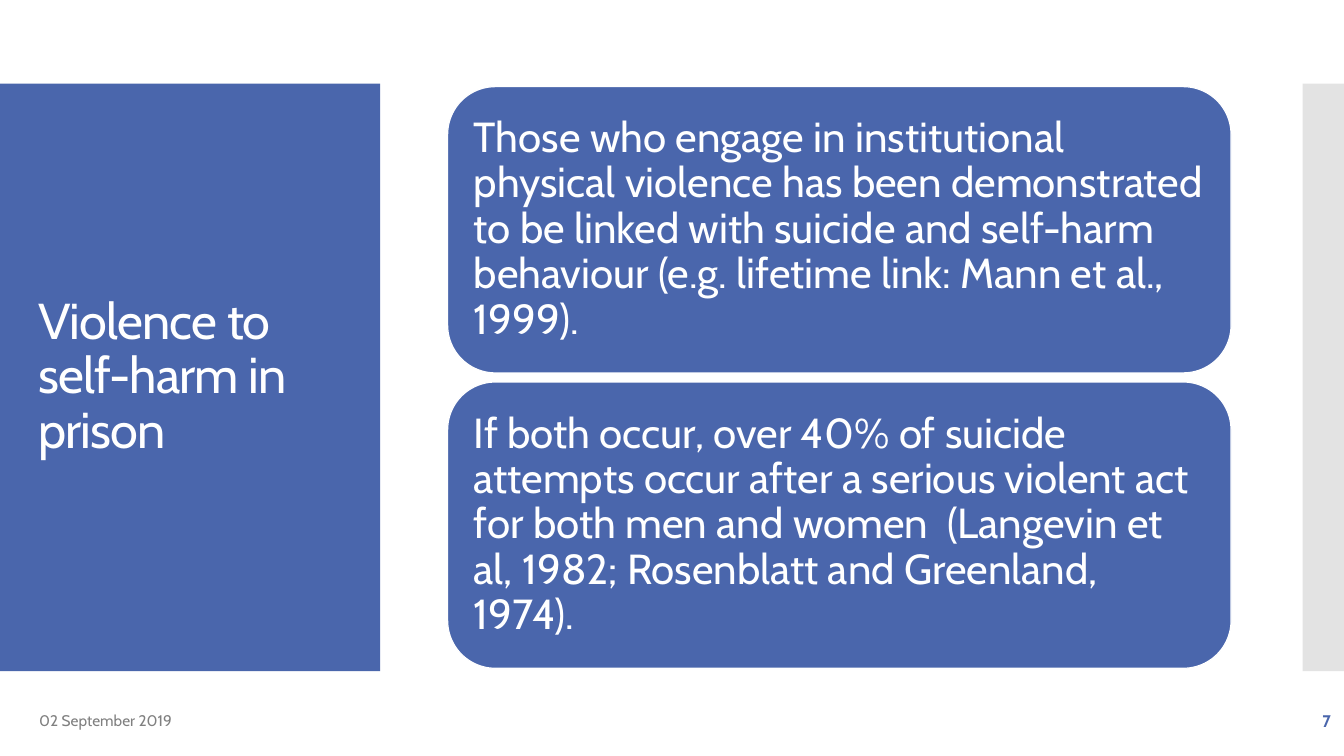
from lxml import etree
from pptx import Presentation
from pptx.dml.color import RGBColor
from pptx.enum.shapes import MSO_SHAPE as Shape
from pptx.enum.text import MSO_ANCHOR as Anchor, MSO_AUTO_SIZE as AutoSize, PP_ALIGN as Align
from pptx.oxml.ns import qn
from pptx.util import Emu, Pt

EMU_PER_PX = 9144  # 100 px to the inch
COLORS = {
    "blue": "4A66AC",
    "white": "FFFFFF",
    "light": "C8C8C8",
    "gray": "808080",
}
FONT = "Cabin"
TITLE_ONLY = 5

STATEMENTS = [
    "Those who engage in institutional physical violence has been demonstrated to be "
    "linked with suicide and self-harm behaviour (e.g. lifetime link: Mann et al., 1999).",
    "If both occur, over 40% of suicide attempts occur after a serious violent act for "
    "both men and women  (Langevin et al, 1982; Rosenblatt and Greenland, 1974).",
]


def px(value):
    return Emu(value * EMU_PER_PX)


def color(name):
    return RGBColor.from_string(COLORS[name])


class SlideBuilder:
    def __init__(self, presentation):
        self.slide = presentation.slides.add_slide(presentation.slide_layouts[TITLE_ONLY])

    def set_text(self, shape, text, size, ink, align=Align.LEFT, bold=False,
                 line_spacing=1.0, space_after=0):
        """Set one middle-anchored paragraph."""
        frame = shape.text_frame
        frame.text = text
        frame.word_wrap = True
        frame.auto_size = AutoSize.NONE
        frame.vertical_anchor = Anchor.MIDDLE
        paragraph = frame.paragraphs[0]
        paragraph.alignment = align
        paragraph.line_spacing = line_spacing
        paragraph.space_after = Pt(space_after)
        font = paragraph.runs[0].font
        font.name = FONT
        font.size = Pt(size)
        font.bold = bold
        font.color.rgb = color(ink)

    def box(self, kind, left, top, width, height, fill):
        shape = self.slide.shapes.add_shape(kind, px(left), px(top), px(width), px(height))
        shape.shadow.inherit = False
        shape.fill.solid()
        shape.fill.fore_color.rgb = color(fill)
        shape.line.fill.background()
        return shape

    def panel(self, left, width, fill, opacity=100):
        """Add a side panel behind the title."""
        shape = self.box(Shape.RECTANGLE, left, 83, width, 583, fill)
        if opacity < 100:
            fill_color = next(shape.element.iter(qn("a:srgbClr")))
            etree.SubElement(fill_color, qn("a:alpha")).set("val", str(opacity * 1000))
        self.slide.shapes.title.element.addprevious(shape.element)

    def title(self, text, left, top, width, height):
        title = self.slide.shapes.title
        title.left, title.top = px(left), px(top)
        title.width, title.height = px(width), px(height)
        self.set_text(title, text, 36, "white", line_spacing=0.9)
        run_properties = next(title.element.iter(qn("a:rPr")))
        run_properties.set("spc", "-60")

    def card(self, text, left, top, width, height):
        card = self.box(Shape.ROUNDED_RECTANGLE, left, top, width, height, "blue")
        card.line.color.rgb = color("white")
        card.line.width = Pt(0.85)
        frame = card.text_frame
        frame.margin_left = frame.margin_right = px(12)
        frame.margin_top = frame.margin_bottom = px(12)
        self.set_text(card, text, 30, "white", line_spacing=0.9, space_after=10.5)

    def footer(self, text, left, width, size, ink, **style):
        label = self.slide.shapes.add_textbox(px(left), px(695), px(width), px(40))
        self.set_text(label, text, size, ink, space_after=6, **style)


def main():
    presentation = Presentation()
    presentation.slide_width = px(1333)
    presentation.slide_height = px(750)

    builder = SlideBuilder(presentation)
    builder.panel(0, 377, "blue")
    builder.panel(1292, 41, "light", opacity=50)
    builder.title("Violence to self-harm in prison", 28, 123, 322, 503)
    for row, statement in enumerate(STATEMENTS):
        builder.card(statement, 444, 86 + row * 293, 777, 284)
    builder.footer("02 September 2019", 29, 300, 11, "gray")
    builder.footer("7", 1163, 167, 12, "blue", align=Align.RIGHT, bold=True)

    presentation.save("out.pptx")


if __name__ == "__main__":
    main()
